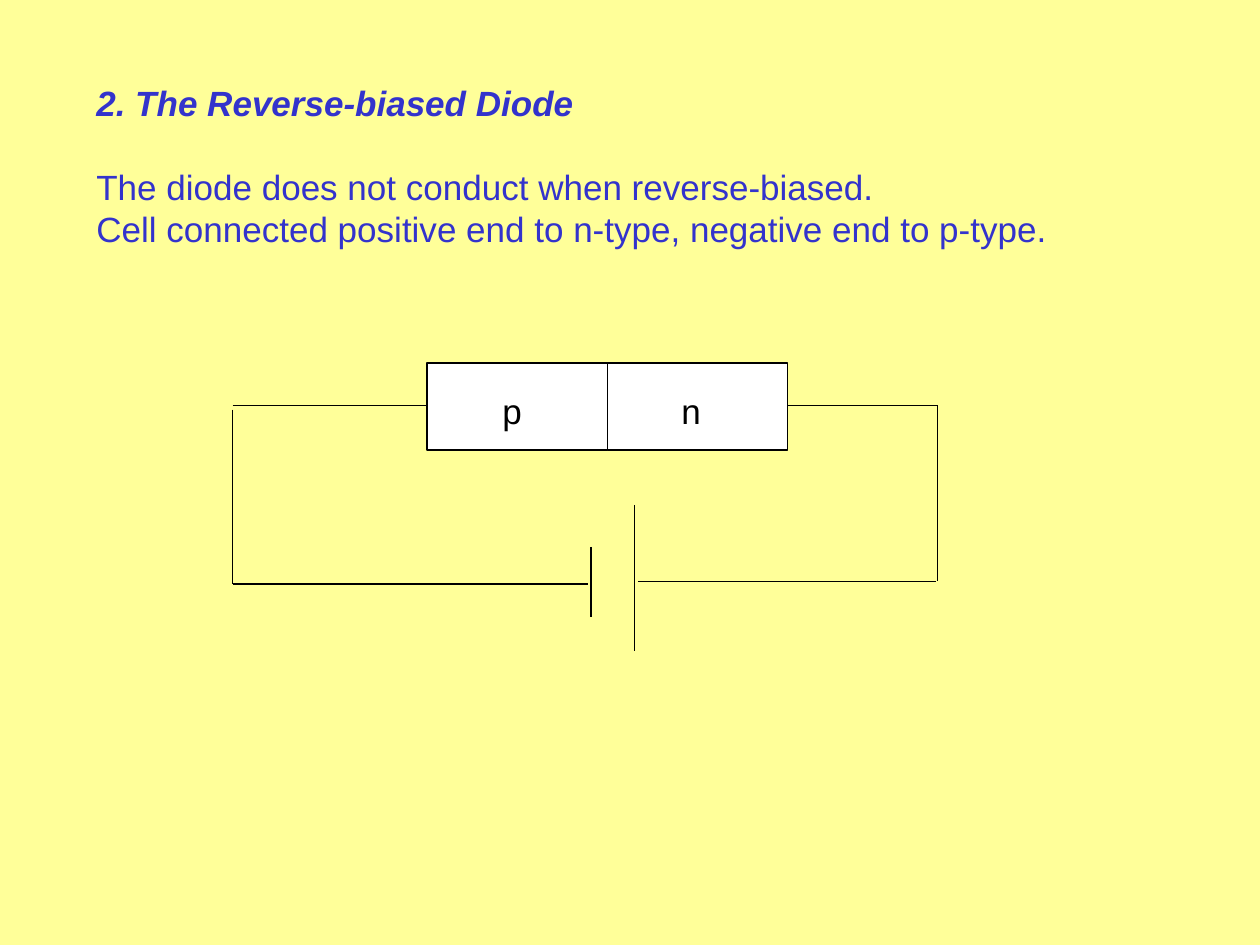
import pptx
import pptx.dml.color
import pptx.enum.shapes
import pptx.enum.text
import pptx.oxml.ns
import pptx.util
from lxml import etree

Pt = pptx.util.Pt

BLACK, BLUE, WHITE, YELLOW = "000000", "3333CC", "FFFFFF", "FFFF99"
FONT, TEXT_SIZE, LINE_WIDTH = "Arial", 20, 0.75

HEADING = "2. The Reverse-biased Diode"
STATEMENTS = [
    "The diode does not conduct when reverse-biased.",
    "Cell connected positive end to n-type, negative end to p-type.",
]

# Circuit geometry: left and right wires, the diode halves and the cell.
LEFT, RIGHT, TOP = 133, 535.7, 231.6
REGION_LEFT, REGION_TOP, REGION_WIDTH, REGION_HEIGHT = 244, 207.4, 103, 49.7
REGIONS = [("p", 280), ("n", 382.3)]  # label, left edge of the label box
NEGATIVE_PLATE, POSITIVE_PLATE = 337.7, 362.5
NEGATIVE_WIRE, POSITIVE_WIRE = 333.7, 332.2

TOP_WIRE = (LEFT, TOP, RIGHT, TOP)
LOWER_LINES = [
    (LEFT, 234, LEFT, NEGATIVE_WIRE),
    (RIGHT, TOP, RIGHT, POSITIVE_WIRE),
    (LEFT, NEGATIVE_WIRE, NEGATIVE_PLATE - 1.5, NEGATIVE_WIRE),
    (POSITIVE_PLATE + 2, POSITIVE_WIRE, RIGHT - 0.7, POSITIVE_WIRE),
    (NEGATIVE_PLATE, 312.5, NEGATIVE_PLATE, 352.8),
    (POSITIVE_PLATE, 288.5, POSITIVE_PLATE, 372),
]


def color(value):
    return pptx.dml.color.RGBColor.from_string(value)


def style_line(line):
    line.color.rgb = color(BLACK)
    line.width = Pt(LINE_WIDTH)


def add_line(page, ends):
    line = page.shapes.add_connector(
        pptx.enum.shapes.MSO_CONNECTOR.STRAIGHT, *map(Pt, ends))
    style_line(line.line)
    etree.SubElement(line._element.spPr, pptx.oxml.ns.qn("a:effectLst"))


def add_region(page, left):
    region = page.shapes.add_shape(
        pptx.enum.shapes.MSO_SHAPE.RECTANGLE,
        Pt(left), Pt(REGION_TOP), Pt(REGION_WIDTH), Pt(REGION_HEIGHT))
    region.shadow.inherit = False
    region.fill.solid()
    region.fill.fore_color.rgb = color(WHITE)
    style_line(region.line)


def add_text_box(page, left, top, width, height):
    box = page.shapes.add_textbox(Pt(left), Pt(top), Pt(width), Pt(height))
    box.text_frame.word_wrap = True
    box.text_frame.auto_size = pptx.enum.text.MSO_AUTO_SIZE.SHAPE_TO_FIT_TEXT
    return box.text_frame


def write(para, text, ink=BLACK, emphasis=False, space_after=0):
    para.space_after = Pt(space_after)
    span = para.add_run()
    span.text = text
    span.font.name = FONT
    span.font.size = Pt(TEXT_SIZE)
    span.font.color.rgb = color(ink)
    span.font.bold = span.font.italic = emphasis


def main():
    deck = pptx.Presentation()
    deck.slide_width, deck.slide_height = Pt(720), Pt(540)
    page = deck.slides.add_slide(deck.slide_layouts[6])
    page.background.fill.solid()
    page.background.fill.fore_color.rgb = color(YELLOW)

    add_line(page, TOP_WIRE)  # runs behind the diode
    for index in range(len(REGIONS)):
        add_region(page, REGION_LEFT + index * REGION_WIDTH)
    for ends in LOWER_LINES:
        add_line(page, ends)
    for label, left in REGIONS:
        write(add_text_box(page, left, 219, 34, 31).paragraphs[0], label)

    frame = add_text_box(page, 48, 43.2, 629, 103)
    write(frame.paragraphs[0], HEADING, ink=BLUE, emphasis=True, space_after=24)
    for statement in STATEMENTS:
        write(frame.add_paragraph(), statement, ink=BLUE)

    deck.save("out.pptx")


if __name__ == "__main__":
    main()
